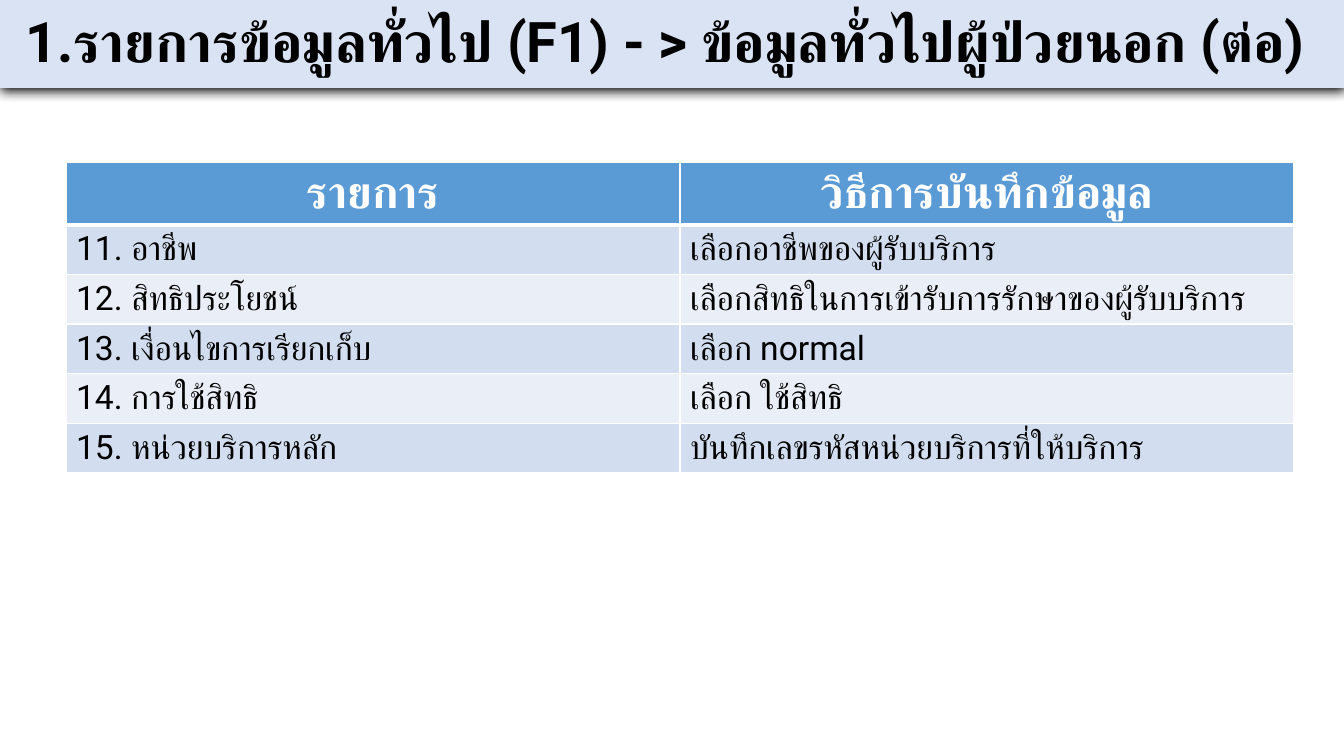
from lxml import etree
from pptx import Presentation
from pptx.dml.color import RGBColor
from pptx.enum.shapes import MSO_SHAPE
from pptx.enum.text import MSO_ANCHOR, PP_ALIGN
from pptx.oxml import parse_xml
from pptx.oxml.ns import nsdecls, qn
from pptx.util import Pt

RECTANGLE = MSO_SHAPE.RECTANGLE
MIDDLE = MSO_ANCHOR.MIDDLE
LEFT, CENTER = PP_ALIGN.LEFT, PP_ALIGN.CENTER

PX = 914400 / 100.8
FONT = "Roboto"
COLORS = {
    "banner": "DAE3F3",
    "header": "5B9BD5",
    "odd_row": "D2DEEF",
    "even_row": "EAEFF7",
    "black": "000000",
    "white": "FFFFFF",
}
TITLE = "1.รายการข้อมูลทั่วไป (F1) - > ข้อมูลทั่วไปผู้ป่วยนอก (ต่อ)"
ROWS = [
    ("รายการ", "วิธีการบันทึกข้อมูล"),
    ("11. อาชีพ", "เลือกอาชีพของผู้รับบริการ"),
    ("12. สิทธิประโยชน์", "เลือกสิทธิในการเข้ารับการรักษาของผู้รับบริการ"),
    ("13. เงื่อนไขการเรียกเก็บ", "เลือก normal"),
    ("14. การใช้สิทธิ", "เลือก ใช้สิทธิ"),
    ("15. หน่วยบริการหลัก", "บันทึกเลขรหัสหน่วยบริการที่ให้บริการ"),
]
TITLE_FONT = {"size": Pt(40), "bold": True}
HEADER_FONT = {"size": Pt(32), "bold": True}
BODY_FONT = {"size": Pt(24), "bold": False}


def px(length):
    return round(length * PX)


def rgb(name):
    return RGBColor.from_string(COLORS[name])


def fill_solid(item, color):
    item.fill.solid()
    item.fill.fore_color.rgb = rgb(color)


def write_text(frame, text, color, align, font_format):
    """Fill the first paragraph, using one typeface for Latin and Thai."""
    para = frame.paragraphs[0]
    para.alignment = align
    span = para.add_run()
    span.text = text
    span.font.name = FONT
    span.font.color.rgb = rgb(color)
    for name, value in font_format.items():
        setattr(span.font, name, value)
    thai = etree.SubElement(span.font._element, qn("a:cs"))
    thai.set("typeface", FONT)
    return para


def add_shadow(shape, blur, distance):
    """Cast a black shadow straight down; lengths are in points."""
    shape._element.spPr.append(parse_xml(
        f'<a:effectLst {nsdecls("a")}><a:outerShdw blurRad="{Pt(blur)}" '
        f'dist="{Pt(distance)}" dir="5400000" algn="t" rotWithShape="0">'
        f'<a:srgbClr val="{COLORS["black"]}"/></a:outerShdw></a:effectLst>'))


def add_banner(page, text):
    box = page.shapes.add_shape(RECTANGLE, 0, 0, px(1344), px(88))
    fill_solid(box, "banner")
    box.line.fill.background()
    add_shadow(box, 8.5, 1)
    frame_format = {
        "word_wrap": True,
        "vertical_anchor": MIDDLE,
        "margin_left": 0,
        "margin_right": px(14),
        "margin_top": 0,
        "margin_bottom": 0,
    }
    for name, value in frame_format.items():
        setattr(box.text_frame, name, value)
    para = write_text(box.text_frame, text, "black", CENTER, TITLE_FONT)
    para.line_spacing = 0.9


def add_borders(cell, widths):
    """Draw white borders; widths maps L, R, T and B to points, in that order."""
    properties = cell._tc.get_or_add_tcPr()
    for side, width in widths.items():
        properties.append(parse_xml(
            f'<a:ln{side} {nsdecls("a")} w="{Pt(width)}"><a:solidFill>'
            f'<a:srgbClr val="{COLORS["white"]}"/></a:solidFill></a:ln{side}>'))


def style_cell(cell, text, row):
    add_borders(cell, {"L": 1, "R": 1, "T": 3 if row == 1 else 1, "B": 3 if row == 0 else 1})
    if row == 0:
        fill_solid(cell, "header")
        write_text(cell.text_frame, text, "white", CENTER, HEADER_FONT)
    else:
        fill_solid(cell, "odd_row" if row % 2 else "even_row")
        write_text(cell.text_frame, text, "black", LEFT, BODY_FONT)


def add_entry_table(page, rows):
    header_height, row_height, column_width = 54, 49, 614
    height = header_height + row_height * (len(rows) - 1)
    table = page.shapes.add_table(
        len(rows), 2, px(66), px(162), px(2 * column_width), px(height)).table
    for column in table.columns:
        column.width = px(column_width)
    for row, texts in enumerate(rows):
        table.rows[row].height = px(row_height if row else header_height)
        for column, text in enumerate(texts):
            style_cell(table.cell(row, column), text, row)


def main():
    deck = Presentation()
    deck.slide_width, deck.slide_height = px(1344), px(756)
    page = deck.slides.add_slide(deck.slide_layouts[6])
    add_banner(page, TITLE)
    add_entry_table(page, ROWS)
    deck.save("out.pptx")


if __name__ == "__main__":
    main()
